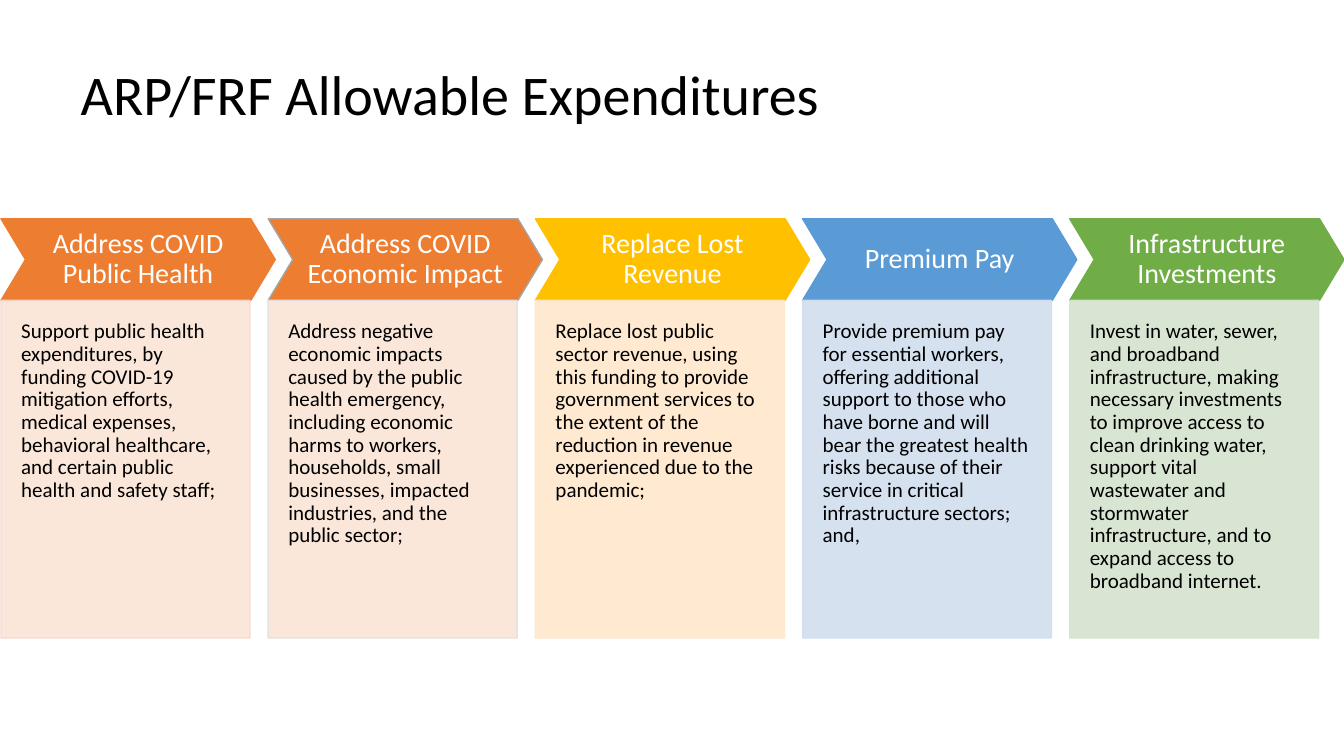
from lxml import etree
from pptx import Presentation
from pptx.dml.color import RGBColor
from pptx.enum.shapes import MSO_SHAPE
from pptx.enum.text import MSO_ANCHOR, PP_ALIGN
from pptx.oxml.ns import qn
from pptx.util import Emu, Pt

CHEVRON, RECTANGLE = MSO_SHAPE.CHEVRON, MSO_SHAPE.RECTANGLE
TOP, MIDDLE = MSO_ANCHOR.TOP, MSO_ANCHOR.MIDDLE
LEFT, CENTER = PP_ALIGN.LEFT, PP_ALIGN.CENTER
TITLE_ONLY = 5
EMU_PER_PX = 9144

FIRST_LEFT, PITCH = 1, 265
HEADING_TOP, HEADING_WIDTH, HEADING_HEIGHT = 217, 272, 81
DETAIL_WIDTH, DETAIL_HEIGHT = 247, 335

EXPENDITURES = [
    ("Address COVID Public Health",
     "Support public health expenditures, by funding COVID-19 mitigation efforts, "
     "medical expenses, behavioral healthcare, and certain public health and safety staff;",
     "ED7D31", "ED7D31", "FBE5D6", "F8D7CE"),
    ("Address COVID Economic Impact",
     "Address negative economic impacts caused by the public health emergency, "
     "including economic harms to workers, households, small businesses, "
     "impacted industries, and the public sector;",
     "ED7D31", "A5A5A5", "FBE5D6", "E1E1E1"),
    ("Replace Lost Revenue",
     "Replace lost public sector revenue, using this funding to provide government "
     "services to the extent of the reduction in revenue experienced due to the pandemic;",
     "FFC000", "FFC000", "FFE8CC", "FFE8CC"),
    ("Premium Pay",
     "Provide premium pay for essential workers, offering additional support to those "
     "who have borne and will bear the greatest health risks because of their service "
     "in critical infrastructure sectors; and,",
     "5B9BD5", "5B9BD5", "D2DEEF", "D2DEEF"),
    ("Infrastructure Investments",
     "Invest in water, sewer, and broadband infrastructure, making necessary investments "
     "to improve access to clean drinking water, support vital wastewater and stormwater "
     "infrastructure, and to expand access to broadband internet.",
     "70AD47", "70AD47", "D5E3CF", "D5E3CF"),
]


def px(length):
    return Emu(length * EMU_PER_PX)


def color(hex_code):
    return RGBColor.from_string(hex_code)


def write(frame, text, size, ink, align, anchor, insets):
    frame.text = text
    frame.word_wrap = True
    frame.vertical_anchor = anchor
    (frame.margin_left, frame.margin_top,
     frame.margin_right, frame.margin_bottom) = map(px, insets)
    paragraph = frame.paragraphs[0]
    paragraph.alignment = align
    paragraph.line_spacing = 0.9
    paragraph.font.name = "Calibri"
    paragraph.font.size = Pt(size)
    paragraph.font.color.rgb = color(ink)


def add_panel(slide, preset, box, fill, outline):
    panel = slide.shapes.add_shape(preset, *map(px, box))
    panel.shadow.inherit = False
    panel.fill.solid()
    panel.fill.fore_color.rgb = color(fill)
    panel.line.color.rgb = color(outline)
    panel.line.width = Pt(1)
    return panel


def set_opacity(panel, percent):
    for tint in panel._element.spPr.iter(qn("a:srgbClr")):
        etree.SubElement(tint, qn("a:alpha")).set("val", str(percent * 1000))


def add_title(slide, text):
    title = slide.shapes.title
    title.left, title.top, title.width, title.height = map(px, (70, 35, 1193, 124))
    write(title.text_frame, text, 40, "000000", LEFT, MIDDLE, (10, 5, 10, 5))


def add_heading(slide, left, text, fill, outline):
    box = (left, HEADING_TOP, HEADING_WIDTH, HEADING_HEIGHT)
    heading = add_panel(slide, CHEVRON, box, fill, outline)
    heading.adjustments[0] = 0.3
    write(heading.text_frame, text, 20, "FFFFFF", CENTER, MIDDLE, (10, 10, 10, 10))


def add_detail(slide, left, text, fill, outline):
    box = (left, HEADING_TOP + HEADING_HEIGHT, DETAIL_WIDTH, DETAIL_HEIGHT)
    detail = add_panel(slide, RECTANGLE, box, fill, outline)
    set_opacity(detail, 90)
    write(detail.text_frame, text, 15, "000000", LEFT, TOP, (20, 20, 20, 39))


def main():
    deck = Presentation()
    deck.slide_width, deck.slide_height = px(1333), px(750)
    slide = deck.slides.add_slide(deck.slide_layouts[TITLE_ONLY])
    add_title(slide, "ARP/FRF Allowable Expenditures")
    for index, expenditure in enumerate(EXPENDITURES):
        heading, detail, fill, outline, pale_fill, pale_outline = expenditure
        left = FIRST_LEFT + index * PITCH
        add_heading(slide, left, heading, fill, outline)
        add_detail(slide, left, detail, pale_fill, pale_outline)
    deck.save("out.pptx")


if __name__ == "__main__":
    main()
